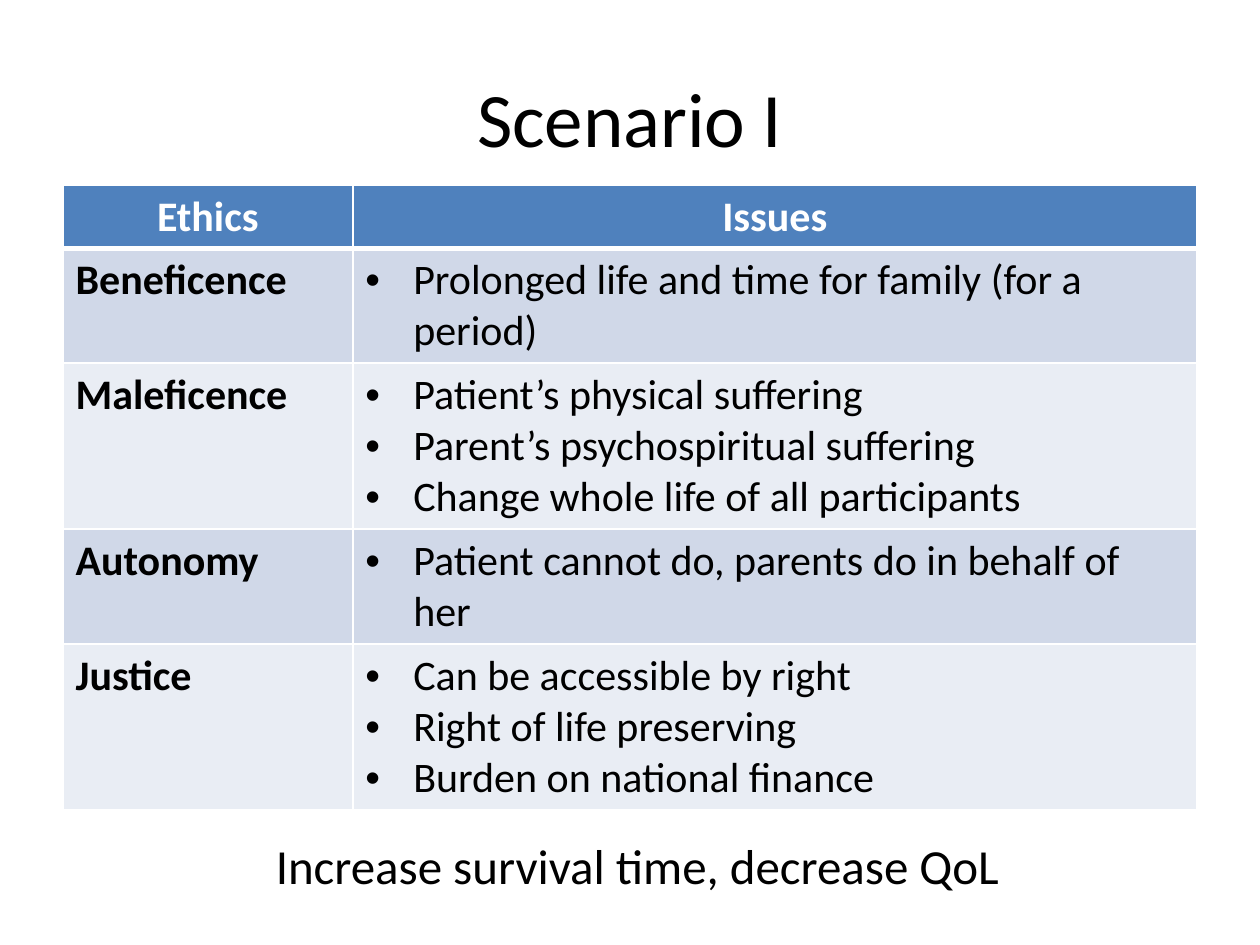
from lxml.etree import SubElement
from pptx import Presentation
from pptx.dml.color import RGBColor
from pptx.enum.text import MSO_ANCHOR as Anchor, PP_ALIGN as Align
from pptx.oxml.ns import qn
from pptx.util import Inches, Pt

ROWS = [
    ("Beneficence", ["Prolonged life and time for family (for a period)"], 2),
    ("Maleficence", ["Patient’s physical suffering",
                     "Parent’s psychospiritual suffering",
                     "Change whole life of all participants"], 3),
    ("Autonomy", ["Patient cannot do, parents do in behalf of her"], 2),
    ("Justice", ["Can be accessible by right",
                 "Right of life preserving",
                 "Burden on national finance"], 3),
]


def color(value):
    return RGBColor.from_string(value)


class SlideBuilder:
    font = "Calibri"
    ink = "000000"
    white = "FFFFFF"
    header = "4F81BD"
    bands = ("D0D8E8", "E9EDF4")
    indent = Inches(0.38)
    line_height = 0.41
    row_padding = 0.09

    def __init__(self, slide):
        self.s = slide

    def run(self, p, text, size, ink=ink, bold=False):
        r = p.add_run()
        r.text = text
        r.font.name = self.font
        r.font.size = Pt(size)
        r.font.bold = bold
        r.font.color.rgb = color(ink)

    def text(self, box, text, size, align=Align.LEFT, anchor=Anchor.TOP):
        sp = self.s.shapes.add_textbox(*map(Inches, box))
        tf = sp.text_frame
        tf.word_wrap = True
        tf.vertical_anchor = anchor
        p = tf.paragraphs[0]
        p.alignment = align
        self.run(p, text, size)

    def borders(self, cell, top, bottom):
        tcPr = cell._tc.get_or_add_tcPr()
        for side, width in (("L", 1), ("R", 1), ("T", top), ("B", bottom)):
            ln = SubElement(tcPr, qn(f"a:ln{side}"), w=str(Pt(width)))
            fill = SubElement(ln, qn("a:solidFill"))
            SubElement(fill, qn("a:srgbClr"), val=self.white)

    def bullet(self, p):
        pPr = p._p.get_or_add_pPr()
        pPr.set("marL", str(self.indent))
        pPr.set("indent", str(-self.indent))
        SubElement(pPr, qn("a:buFont"), typeface="Arial")
        SubElement(pPr, qn("a:buChar"), char="•")

    def cell(self, cell, lines, fill, ink=ink, bold=False,
             align=Align.LEFT, bullets=False, top=1, bottom=1):
        self.borders(cell, top, bottom)
        cell.fill.solid()
        cell.fill.fore_color.rgb = color(fill)
        tf = cell.text_frame
        for i, line in enumerate(lines):
            p = tf.add_paragraph() if i else tf.paragraphs[0]
            p.alignment = align
            if bullets:
                self.bullet(p)
            self.run(p, line, 24, ink, bold)

    def table(self, left, top, widths, headings, rows):
        heights = [self.row_padding + self.line_height * n
                   for n in [1] + [count for _, _, count in rows]]
        box = (left, top, sum(widths), sum(heights))
        table = self.s.shapes.add_table(
            len(heights), len(widths), *map(Inches, box)).table
        for column, width in zip(table.columns, widths):
            column.width = Inches(width)
        for row, height in zip(table.rows, heights):
            row.height = Inches(height)
        for i, heading in enumerate(headings):
            self.cell(table.cell(0, i), [heading], self.header, self.white,
                      bold=True, align=Align.CENTER, bottom=3)
        for i, (ethic, issues, _) in enumerate(rows, 1):
            fill = self.bands[(i - 1) % 2]
            edge = 3 if i == 1 else 1
            self.cell(table.cell(i, 0), [ethic], fill, bold=True, top=edge)
            self.cell(table.cell(i, 1), issues, fill, bullets=True, top=edge)


def main():
    prs = Presentation()
    prs.slide_width, prs.slide_height = Inches(10), Inches(7.5)
    builder = SlideBuilder(prs.slides.add_slide(prs.slide_layouts[6]))
    builder.text((0.5, 0.3, 9, 1.25), "Scenario I", 44,
                 Align.CENTER, Anchor.MIDDLE)
    builder.table(0.5, 1.47, (2.3, 6.7), ("Ethics", "Issues"), ROWS)
    builder.text((2.09, 6.58, 6.38, 0.57),
                 "Increase survival time, decrease QoL", 28)
    prs.save("out.pptx")


if __name__ == "__main__":
    main()
